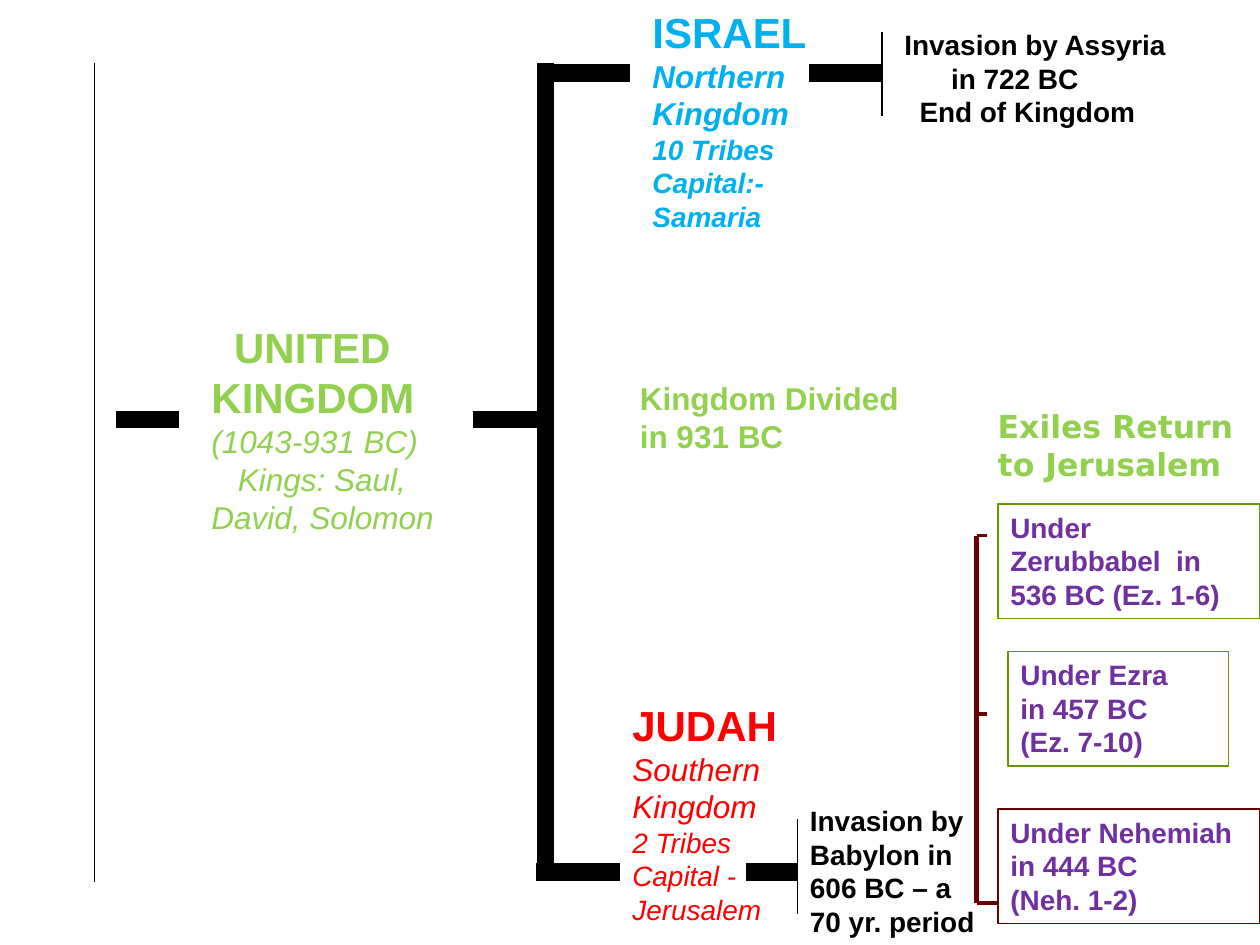
from dataclasses import dataclass

from pptx import Presentation
from pptx.dml.color import RGBColor
from pptx.enum import shapes, text
from pptx.oxml import parse_xml
from pptx.oxml.ns import nsdecls
from pptx.util import Inches, Pt


@dataclass(frozen=True)
class Theme:
    black: str = "000000"
    green: str = "92D050"
    blue: str = "00B0F0"
    red: str = "FF0000"
    purple: str = "7030A0"
    maroon: str = "680000"
    olive: str = "669900"
    font: str = "Arial"
    wide_font: str = "DejaVu Sans"
    title: int = 24
    heading: int = 18
    body: int = 16
    thin: float = 0.75
    thick: float = 10
    bracket: float = 3
    bracket_arm: float = 2.25


THEME = Theme()


@dataclass(frozen=True)
class Line:
    text: str
    size: int = THEME.body
    bold: bool = True
    italic: bool = False
    indent: float = 0


@dataclass(frozen=True)
class Label:
    left: float
    top: float
    width: float
    height: float
    color: str
    lines: tuple[Line, ...]
    font: str = THEME.font
    wrap: bool = True
    border: str | None = None


@dataclass(frozen=True)
class Stroke:
    x1: float
    y1: float
    x2: float
    y2: float
    width: float = THEME.thick
    color: str = THEME.black


def plain(*texts: str, size: int = THEME.body) -> tuple[Line, ...]:
    return tuple(Line(line, size) for line in texts)


def write_line(paragraph, content: str, *, size: int, color: str, font: str,
               bold: bool, italic: bool, indent: float) -> None:
    run = paragraph.add_run()
    run.text = content
    run.font.size = Pt(size)
    run.font.name = font
    run.font.bold = bold
    run.font.italic = italic
    run.font.color.rgb = RGBColor.from_string(color)
    paragraph.alignment = text.PP_ALIGN.LEFT
    if indent:
        properties = paragraph._p.get_or_add_pPr()
        properties.set("marL", "0")
        properties.set("indent", str(Inches(indent)))


def draw_label(slide, label: Label) -> None:
    place = [Inches(v) for v in (label.left, label.top, label.width, label.height)]
    if label.border:
        shape = slide.shapes.add_shape(shapes.MSO_SHAPE.RECTANGLE, *place)
        shape.shadow.inherit = False
        shape.fill.background()
        shape.line.color.rgb = RGBColor.from_string(label.border)
        shape.line.width = Pt(THEME.thin)
    else:
        shape = slide.shapes.add_textbox(*place)
    frame = shape.text_frame
    frame.word_wrap = label.wrap
    frame.auto_size = text.MSO_AUTO_SIZE.SHAPE_TO_FIT_TEXT
    frame.vertical_anchor = text.MSO_ANCHOR.TOP
    for index, line in enumerate(label.lines):
        paragraph = frame.add_paragraph() if index else frame.paragraphs[0]
        write_line(paragraph, line.text, size=line.size, color=label.color,
                   font=label.font, bold=line.bold, italic=line.italic,
                   indent=line.indent)


def draw_stroke(slide, stroke: Stroke) -> None:
    ends = [Inches(v) for v in (stroke.x1, stroke.y1, stroke.x2, stroke.y2)]
    connector = slide.shapes.add_connector(shapes.MSO_CONNECTOR.STRAIGHT, *ends)
    connector.line.color.rgb = RGBColor.from_string(stroke.color)
    connector.line.width = Pt(stroke.width)
    connector._element.spPr.append(parse_xml(f"<a:effectLst {nsdecls('a')}/>"))


# Vertical positions of the three branches, and the two upright lines
NORTH, MIDDLE, SOUTH = 0.58, 3.33, 6.92
TRUNK, BRACKET = 4.33, 7.75

STROKES = [
    # Thin time marks: start, fall of the north, fall of the south
    Stroke(0.75, 0.5, 0.75, 7, THEME.thin),
    Stroke(7, 0.25, 7, 0.92, THEME.thin),
    Stroke(6.33, 6.5, 6.33, 7.25, THEME.thin),
    # Thick tree of kingdoms
    Stroke(0.92, MIDDLE, 1.42, MIDDLE),
    Stroke(3.75, MIDDLE, TRUNK, MIDDLE),
    Stroke(TRUNK, 3.5, TRUNK, 0.5),
    Stroke(TRUNK, MIDDLE, TRUNK, SOUTH),
    Stroke(TRUNK, NORTH, 5, NORTH),
    Stroke(6.42, NORTH, 7, NORTH),
    Stroke(4.25, SOUTH, 4.92, SOUTH),
    Stroke(5.92, SOUTH, 6.33, SOUTH),
    # Bracket of the returns
    Stroke(BRACKET, 4.25, BRACKET, 7.17, THEME.bracket, THEME.maroon),
    *(Stroke(BRACKET, y, end, y, THEME.bracket_arm, THEME.maroon)
      for y, end in ((4.25, 7.83), (5.67, 7.83), (7.17, 7.92))),
]

LABELS = [
    # Kingdoms
    Label(1.58, 2.5, 2.17, 1.8, THEME.green, (
        Line("UNITED", THEME.title, indent=0.18),
        Line("KINGDOM", THEME.title),
        Line("(1043-931 BC)", THEME.heading, False, True),
        Line("Kings: Saul, David, Solomon", THEME.heading, False, True, 0.21))),
    Label(4.92, 5.5, 1.42, 1.9, THEME.red, (
        Line("JUDAH", THEME.title),
        Line("Southern Kingdom", THEME.heading, False, True),
        *(Line(line, THEME.body, False, True)
          for line in ("2 Tribes", "Capital -", "Jerusalem")))),
    Label(5.08, 0, 1.58, 1.9, THEME.blue, (
        Line("ISRAEL", THEME.title),
        *(Line(line, THEME.heading, italic=True) for line in ("Northern", "Kingdom")),
        *(Line(line, italic=True) for line in ("10 Tribes", "Capital:-", "Samaria")))),
    # Events
    Label(7.08, 0.17, 2.5, 0.9, THEME.black, (
        Line("Invasion by Assyria"),
        Line("in 722 BC", indent=0.37),
        Line("End of Kingdom", indent=0.12))),
    Label(6.33, 6.33, 1.58, 1.17, THEME.black,
          plain("Invasion by", "Babylon in", "606 BC – a 70 yr. period")),
    Label(4.98, 2.96, 2.26, 0.7, THEME.green,
          plain("Kingdom Divided", "in 931 BC", size=THEME.heading), wrap=False),
    # Returns from exile
    Label(7.82, 3.18, 2.18, 0.7, THEME.green,
          plain("Exiles Return", "to Jerusalem", size=THEME.heading),
          font=THEME.wide_font),
    Label(7.92, 4, 2.08, 0.91, THEME.purple,
          plain("Under", "Zerubbabel  in", "536 BC (Ez. 1-6)"), border=THEME.olive),
    Label(8, 5.17, 1.75, 0.91, THEME.purple,
          plain("Under Ezra", "in 457 BC", "(Ez. 7-10)"), border=THEME.olive),
    Label(7.92, 6.42, 2.08, 0.91, THEME.purple,
          plain("Under Nehemiah", "in 444 BC", "(Neh. 1-2)"), border=THEME.maroon),
]


def main() -> None:
    presentation = Presentation()
    presentation.slide_width = Inches(10)
    presentation.slide_height = Inches(7.5)
    slide = presentation.slides.add_slide(presentation.slide_layouts[6])
    for stroke in STROKES:
        draw_stroke(slide, stroke)
    for label in LABELS:
        draw_label(slide, label)
    presentation.save("out.pptx")


if __name__ == "__main__":
    main()
